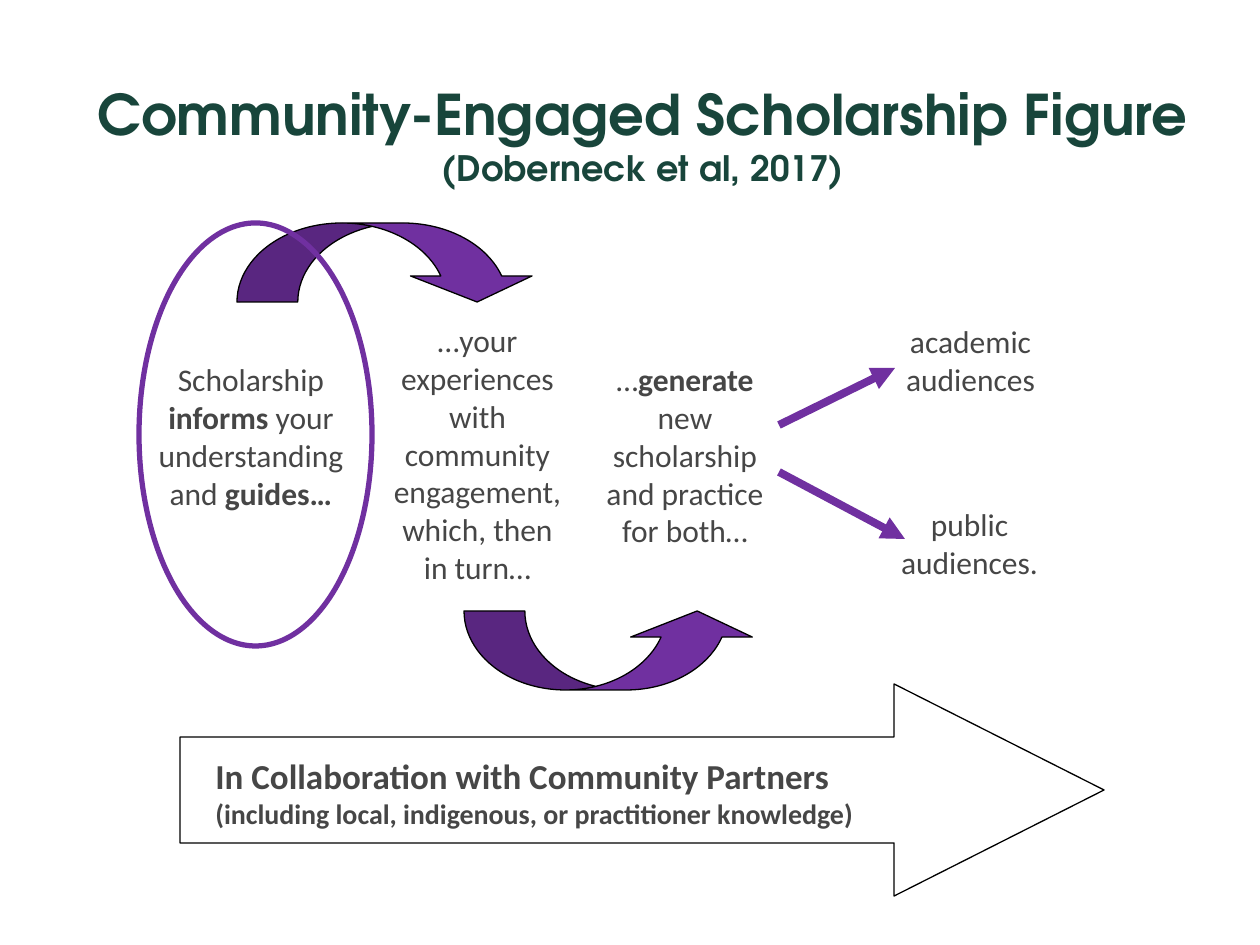
import pptx
import pptx.dml.color
import pptx.enum.shapes
import pptx.enum.text
import pptx.oxml
import pptx.oxml.ns
import pptx.util

SCALE = 914400 / 126  # EMU per px
SLIDE = (1260, 945)
COLORS = {"title": "18453B", "text": "464646", "purple": "7030A0",
          "black": "000000", "white": "FFFFFF"}
TITLE_FONT, BODY_FONT = "TeX Gyre Adventor", "Calibri"
KINDS = pptx.enum.shapes.MSO_SHAPE
ALIGN = pptx.enum.text.PP_ALIGN
ANCHOR = pptx.enum.text.MSO_ANCHOR

# Runs are (text, size in pt, bold)
TITLE_PLACE = (76, 92, 1134, 84)
TITLE_LINES = [("Community-Engaged Scholarship Figure", 32, True),
               ("(Doberneck et al, 2017)", 20, True)]
STEPS = [
    ((139, 354, 224, 208), [("Scholarship ", 18, False), ("informs", 18, True),
                            (" your understanding and ", 18, False),
                            ("guides…", 18, True)]),
    ((381, 315, 193, 280), [("…your experiences with community engagement, "
                             "which, then in turn…", 18, False)]),
    ((580, 354, 210, 204), [("…", 18, False), ("generate ", 18, True),
                            ("new scholarship and practice for both…", 18, False)]),
    ((873, 499, 193, 112), [("public audiences.", 18, False)]),
    ((874, 316, 193, 112), [("academic audiences", 18, False)]),
]
PARTNERS_ARROW = (180, 684, 924, 212)
PARTNERS_PLACE = (203, 748, 725, 77)
PARTNERS = [("In Collaboration with Community Partners ", 20, True),
            ("(including local, indigenous, or practitioner knowledge)", 16, True)]
CURVES = [((237, 223, 301, 79), False), ((464, 611, 294, 79), True)]
CURVE_ADJUST = (0.77, 1.54, 0.33)
AUDIENCE_ARROWS = [(779, 472, 905, 539), (779, 425, 895, 368)]
HIGHLIGHT = (139, 223, 233, 423)


def emu(lengths):
    return [pptx.util.Emu(round(length * SCALE)) for length in lengths]


def rgb(name):
    return pptx.dml.color.RGBColor.from_string(COLORS[name])


def add_run(para, text, size, bold, font, color):
    span = para.add_run()
    span.text = text
    span.font.name = font
    span.font.size = pptx.util.Pt(size)
    span.font.bold = bold
    span.font.color.rgb = rgb(color)


def add_text(slide, place, runs, align):
    box = slide.shapes.add_textbox(*emu(place))
    box.fill.solid()
    box.fill.fore_color.rgb = rgb("white")
    frame = box.text_frame
    frame.word_wrap = True
    frame.vertical_anchor = ANCHOR.TOP
    para = frame.paragraphs[0]
    para.alignment = align
    para.space_after = pptx.util.Pt(10)
    for run in runs:
        add_run(para, *run, BODY_FONT, "text")


def add_figure(slide, kind, place, fill, line, width, adjust=()):
    """Add a preset shape; a fill of None leaves it hollow."""
    shape = slide.shapes.add_shape(kind, *emu(place))
    shape.shadow.inherit = False
    if fill:
        shape.fill.solid()
        shape.fill.fore_color.rgb = rgb(fill)
    else:
        shape.fill.background()
    shape.line.color.rgb = rgb(line)
    shape.line.width = pptx.util.Pt(width)
    for index, value in enumerate(adjust):
        shape.adjustments[index] = value
    return shape


def add_arrow(slide, ends):
    arrow = slide.shapes.add_connector(
        pptx.enum.shapes.MSO_CONNECTOR.STRAIGHT, *emu(ends))
    arrow.line.color.rgb = rgb("purple")
    arrow.line.width = pptx.util.Pt(4.5)
    head = pptx.oxml.parse_xml(
        f'<a:tailEnd {pptx.oxml.ns.nsdecls("a")} type="triangle"/>')
    arrow.line._get_or_add_ln().append(head)
    effects = pptx.oxml.parse_xml(f'<a:effectLst {pptx.oxml.ns.nsdecls("a")}/>')
    arrow.element.spPr.append(effects)


def add_title(slide):
    title = slide.shapes.title
    title.left, title.top, title.width, title.height = emu(TITLE_PLACE)
    frame = title.text_frame
    frame.auto_size = pptx.enum.text.MSO_AUTO_SIZE.NONE
    frame.vertical_anchor = ANCHOR.MIDDLE
    para = frame.paragraphs[0]
    para.alignment = ALIGN.CENTER
    for index, line in enumerate(TITLE_LINES):
        if index:
            para.add_line_break()
        add_run(para, *line, TITLE_FONT, "title")


def main():
    deck = pptx.Presentation()
    deck.slide_width, deck.slide_height = emu(SLIDE)
    slide = deck.slides.add_slide(deck.slide_layouts[5])
    add_title(slide)
    add_figure(slide, KINDS.RIGHT_ARROW, PARTNERS_ARROW,
               "white", "black", 0.75, (0.5, 0.99))
    for place, runs in STEPS:
        add_text(slide, place, runs, ALIGN.CENTER)
    for place, flipped in CURVES:
        curve = add_figure(slide, KINDS.CURVED_DOWN_ARROW, place,
                           "purple", "black", 0.75, CURVE_ADJUST)
        if flipped:
            curve.element.spPr.find(pptx.oxml.ns.qn("a:xfrm")).set("flipV", "1")
    for ends in AUDIENCE_ARROWS:
        add_arrow(slide, ends)
    add_text(slide, PARTNERS_PLACE, PARTNERS, ALIGN.LEFT)
    add_figure(slide, KINDS.OVAL, HIGHLIGHT, None, "purple", 3)
    deck.save("out.pptx")


if __name__ == "__main__":
    main()
